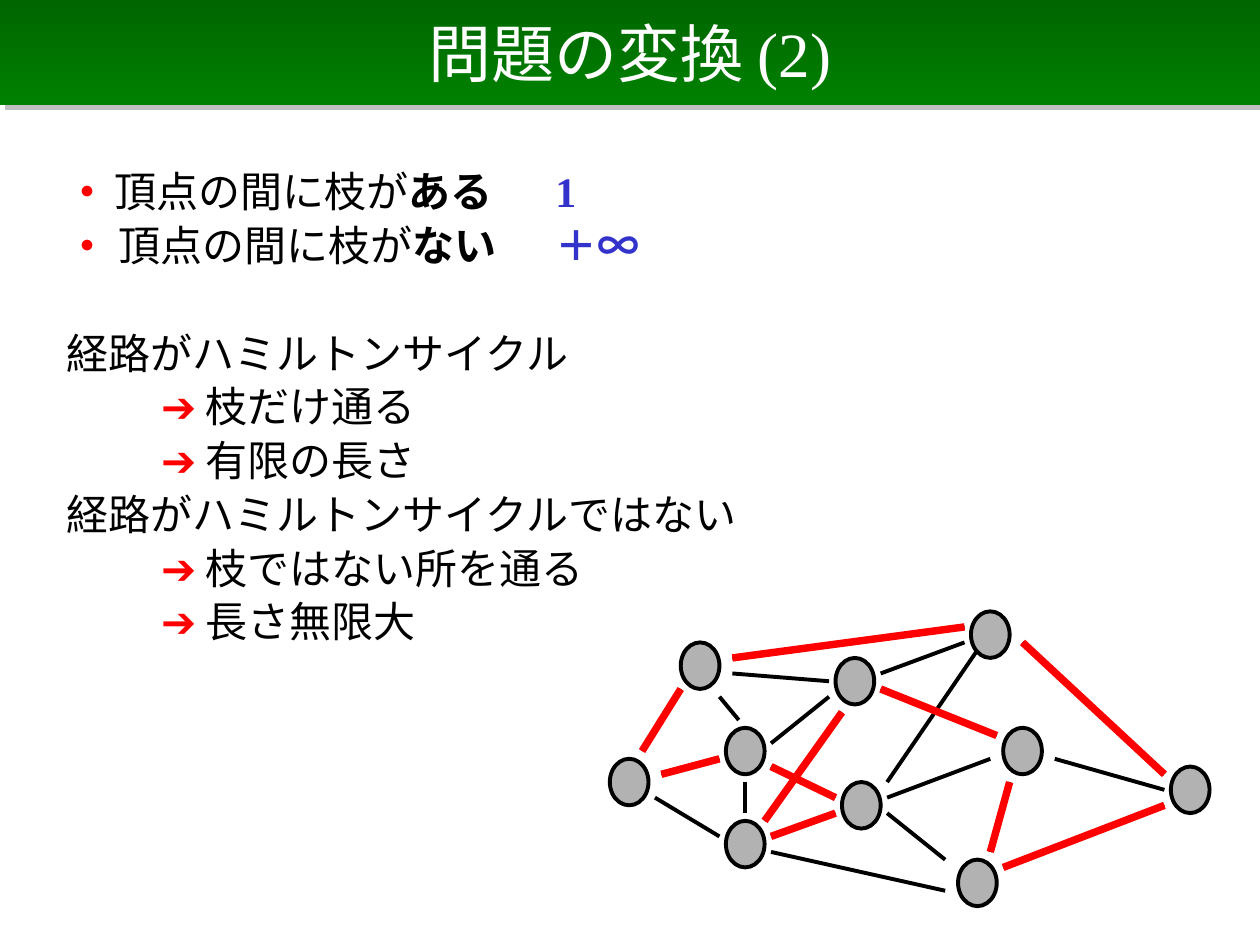
import dataclasses

import lxml.etree
import pptx
import pptx.dml.color
import pptx.enum.shapes
import pptx.enum.text
import pptx.oxml
import pptx.oxml.ns
import pptx.util

SLIDE_W, SLIDE_H = pptx.util.Inches(10), pptx.util.Inches(7.5)


@dataclasses.dataclass(frozen=True)
class Theme:
    font: str = "Times New Roman"
    title_size: float = 36
    body_size: float = 24
    edge_width: float = 2.25
    cycle_width: float = 4.25
    black: str = "000000"
    white: str = "FFFFFF"
    red: str = "FF0000"
    blue: str = "3333CC"
    node: str = "B2B2B2"
    shadow: str = "808080"
    band: tuple = ("006600", "008000")


THEME = Theme()

# Graph area as shares of the slide, divided into columns and rows
GRAPH_LEFT, GRAPH_TOP = 0.484 * SLIDE_W, 0.647 * SLIDE_H
COLUMN, ROW = 0.476 * SLIDE_W / 93, 0.312 * SLIDE_H / 38
NODE_COLUMNS, NODE_ROWS = 6, 6

# Top left corner of each vertex: column, row
NODES = [(35, 6), (36, 22), (54, 32), (61, 15), (56, 0),
         (0, 19), (87, 20), (11, 4), (18, 15), (18, 27)]
# Edges: start column, start row, end column, end row
OTHER_EDGES = [
    (19, 8, 34, 9), (25, 17, 34, 11), (25, 31, 52, 36), (42, 8, 55, 4),
    (43, 24, 59, 19), (43, 26, 52, 32), (7, 24, 17, 29), (69, 19, 86, 23),
    (43, 22, 57, 5), (21, 26, 21, 22), (20, 14, 17, 11)]
CYCLE_EDGES = [
    (64, 4, 86, 21), (61, 33, 86, 25), (62, 22, 59, 31), (42, 10, 60, 16),
    (36, 13, 24, 27), (25, 29, 35, 26), (25, 20, 35, 24), (8, 21, 17, 19),
    (5, 18, 11, 10), (19, 6, 55, 2)]


def rgb(value):
    return pptx.dml.color.RGBColor.from_string(value)


def set_attributes(target, values):
    for name, value in values.items():
        setattr(target, name, value)


def add_effects(shape, content=""):
    effects = f"<a:effectLst {pptx.oxml.ns.nsdecls('a')}>{content}</a:effectLst>"
    shape._element.spPr.append(pptx.oxml.parse_xml(effects))


def add_run(paragraph, text, size, color, bold=False):
    run = paragraph.add_run()
    run.text = text
    set_attributes(run.font, {
        "name": THEME.font, "size": pptx.util.Pt(size), "bold": bold})
    run.font.color.rgb = rgb(color)


def add_title(slide, text):
    band = slide.shapes.add_shape(
        pptx.enum.shapes.MSO_SHAPE.RECTANGLE,
        0, round(-0.001 * SLIDE_H), SLIDE_W, round(0.112 * SLIDE_H))
    band.line.fill.background()
    band.fill.gradient()
    band.fill.gradient_angle = 270
    for stop, color, position in zip(band.fill.gradient_stops, THEME.band, (0, 1)):
        set_attributes(stop, {"position": position})
        stop.color.rgb = rgb(color)
    distance = pptx.util.Pt(4.2)
    add_effects(band, f'<a:outerShdw dist="{distance}" dir="2700000">'
                      f'<a:srgbClr val="{THEME.shadow}"><a:alpha val="50000"/>'
                      '</a:srgbClr></a:outerShdw>')
    band.text_frame.vertical_anchor = pptx.enum.text.MSO_ANCHOR.MIDDLE
    paragraph = band.text_frame.paragraphs[0]
    paragraph.alignment = pptx.enum.text.PP_ALIGN.CENTER
    add_run(paragraph, text, THEME.title_size, THEME.white)


def add_line(frame, runs, left=0.38, hanging=0.38, before=4.8, tab=None):
    """Add one body line; lengths in inches, space before in points."""
    paragraph = frame.paragraphs[0]
    if paragraph.runs:
        paragraph = frame.add_paragraph()
    set_attributes(paragraph, {
        "line_spacing": 0.9, "space_before": pptx.util.Pt(before)})
    properties = paragraph._p.get_or_add_pPr()
    properties.set("marL", str(pptx.util.Inches(left)))
    properties.set("indent", str(-pptx.util.Inches(hanging)))
    if tab:
        stops = lxml.etree.SubElement(properties, pptx.oxml.ns.qn("a:tabLst"))
        lxml.etree.SubElement(stops, pptx.oxml.ns.qn("a:tab"),
                              pos=str(pptx.util.Inches(tab)), algn="ctr")
    for text, color, bold in runs:
        add_run(paragraph, text, THEME.body_size, color, bold)


def add_weight(frame, bullet, answer, weight):
    add_line(frame, [(bullet, THEME.red, True),
                     ("頂点の間に枝が", THEME.black, False),
                     (answer + "\t", THEME.black, True),
                     (weight, THEME.blue, True)], tab=4.23)


def add_case(frame, heading, consequences, before=4.8):
    add_line(frame, [(heading, THEME.black, False)], before=before)
    for consequence in consequences:
        add_line(frame, [("➔ ", THEME.red, True),
                         (consequence, THEME.black, False)], left=0.75, hanging=0)


def add_body(slide):
    body = slide.shapes.add_textbox(
        round(0.043 * SLIDE_W), round(0.175 * SLIDE_H),
        round(0.858 * SLIDE_W), round(0.667 * SLIDE_H))
    frame = body.text_frame
    frame.word_wrap = True
    add_weight(frame, "•\t", "ある", "1")
    add_weight(frame, "• ", "ない", "＋∞")
    add_case(frame, "経路がハミルトンサイクル", ["枝だけ通る", "有限の長さ"], before=35.6)
    add_case(frame, "経路がハミルトンサイクルではない", ["枝ではない所を通る", "長さ無限大"])


def graph_point(column, row):
    return round(GRAPH_LEFT + column * COLUMN), round(GRAPH_TOP + row * ROW)


def add_node(slide, column, row):
    node = slide.shapes.add_shape(
        pptx.enum.shapes.MSO_SHAPE.OVAL, *graph_point(column, row),
        round(NODE_COLUMNS * COLUMN), round(NODE_ROWS * ROW))
    node.shadow.inherit = False
    node.fill.solid()
    node.fill.fore_color.rgb = rgb(THEME.node)
    node.line.color.rgb = rgb(THEME.black)
    node.line.width = pptx.util.Pt(THEME.edge_width)


def add_edge(slide, edge, color, width):
    line = slide.shapes.add_connector(
        pptx.enum.shapes.MSO_CONNECTOR.STRAIGHT,
        *graph_point(*edge[:2]), *graph_point(*edge[2:]))
    line.line.color.rgb = rgb(color)
    line.line.width = pptx.util.Pt(width)
    add_effects(line)


def add_graph(slide):
    for node in NODES:
        add_node(slide, *node)
    # All edges in black, then the Hamiltonian cycle on top in red
    for edge in OTHER_EDGES + CYCLE_EDGES:
        add_edge(slide, edge, THEME.black, THEME.edge_width)
    for edge in CYCLE_EDGES:
        add_edge(slide, edge, THEME.red, THEME.cycle_width)


def main():
    presentation = pptx.Presentation()
    set_attributes(presentation, {"slide_width": SLIDE_W, "slide_height": SLIDE_H})
    slide = presentation.slides.add_slide(presentation.slide_layouts[6])
    add_title(slide, "問題の変換 (2)")
    add_body(slide)
    add_graph(slide)
    presentation.save("out.pptx")


if __name__ == "__main__":
    main()
